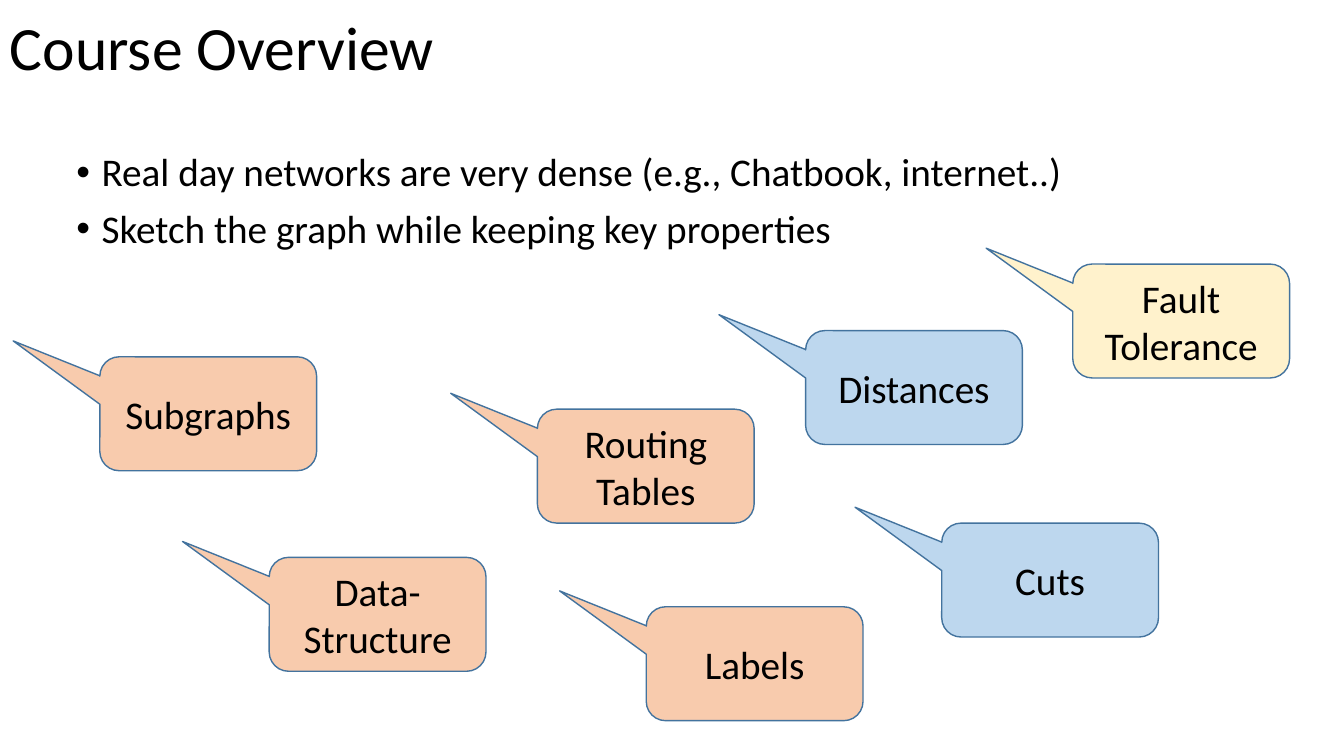
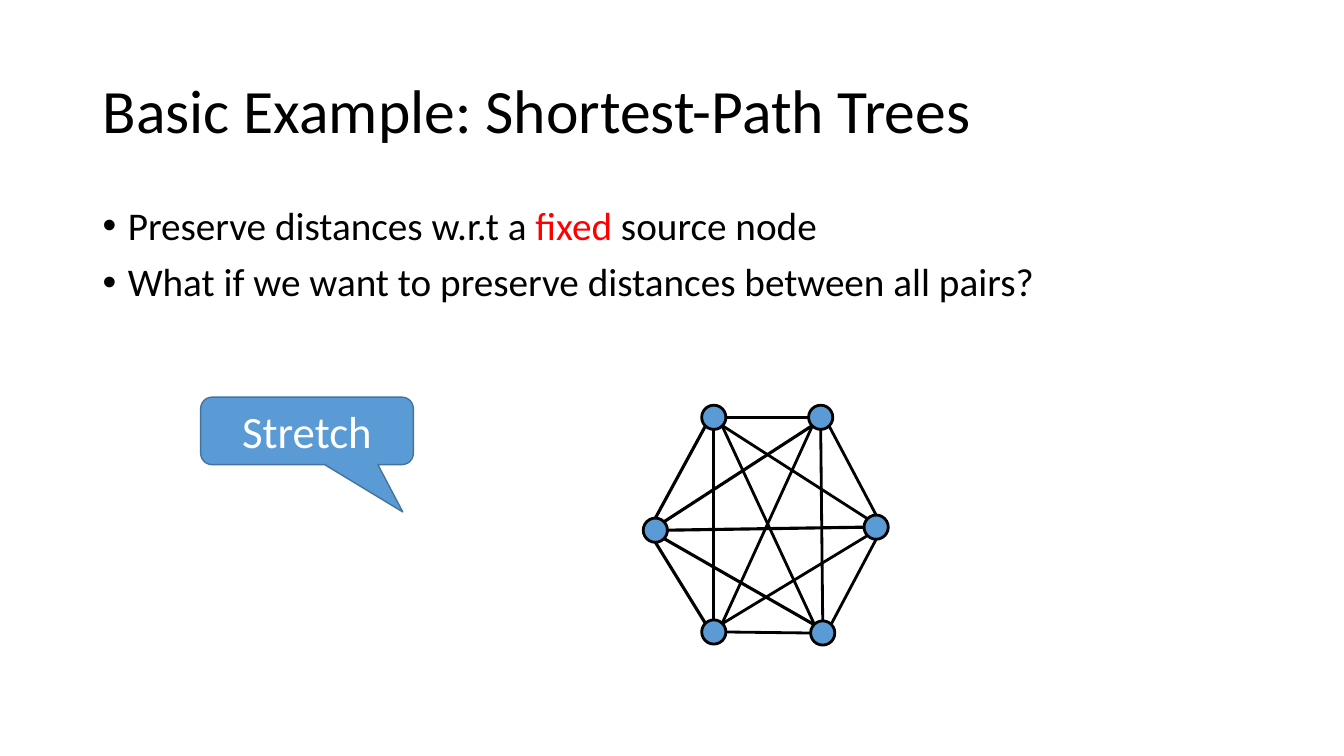
"""Build two lecture slides: a course overview and shortest-path trees."""
from math import cos, radians, sin

from lxml.etree import SubElement
from pptx import Presentation
from pptx.dml.color import RGBColor
from pptx.enum.shapes import MSO_CONNECTOR as CONN, MSO_SHAPE as SHAPE
from pptx.enum.text import MSO_ANCHOR as ANCHOR, PP_ALIGN as ALIGN
from pptx.oxml.ns import qn
from pptx.util import Pt

PX = 9144
BLACK = RGBColor(0x00, 0x00, 0x00)
WHITE = RGBColor(0xFF, 0xFF, 0xFF)
RED = RGBColor(0xFF, 0x00, 0x00)
BLUE = RGBColor(0x5B, 0x9B, 0xD5)
OUTLINE = RGBColor(0x43, 0x73, 0x9E)
ORANGE = RGBColor(0xF8, 0xCB, 0xAD)
PALE_BLUE = RGBColor(0xBD, 0xD7, 0xEE)
YELLOW = RGBColor(0xFF, 0xF2, 0xCC)

TITLE = {"size": 44, "para": {"line_spacing": 0.9}}
BODY = {"size": 28, "para": {"line_spacing": 0.9, "space_before": Pt(10)}}
LABEL = {"size": 28, "para": {"alignment": ALIGN.CENTER}}
STRETCH = {"size": 32, "para": {"alignment": ALIGN.CENTER}}


def write(sp, paragraphs, style, anchor=ANCHOR.MIDDLE, bullet=False):
    """Write paragraphs, each a list of (text, colour) runs."""
    tf = sp.text_frame
    tf.word_wrap = True
    tf.vertical_anchor = anchor
    for i, runs in enumerate(paragraphs):
        p = tf.add_paragraph() if i else tf.paragraphs[0]
        for name, value in style["para"].items():
            setattr(p, name, value)
        if bullet:
            pPr = p._p.get_or_add_pPr()
            pPr.set("marL", str(25 * PX))
            pPr.set("indent", str(-25 * PX))
            SubElement(pPr, qn("a:buFont")).set("typeface", "Arial")
            SubElement(pPr, qn("a:buChar")).set("char", "•")
        for text, color in runs:
            r = p.add_run()
            r.text = text
            r.font.color.rgb = color
            for name, value in {"name": "Calibri", "size": Pt(style["size"])}.items():
                setattr(r.font, name, value)


def add_shape(s, kind, box, fill, line, width, adjust=()):
    """Add a filled, outlined shape without a shadow."""
    sp = s.shapes.add_shape(kind, *(v * PX for v in box))
    sp.shadow.inherit = False
    sp.fill.solid()
    sp.fill.fore_color.rgb = fill
    sp.line.color.rgb = line
    sp.line.width = Pt(width)
    for i, value in enumerate(adjust):
        sp.adjustments[i] = value
    return sp


prs = Presentation()
prs.slide_width, prs.slide_height = 1333 * PX, 750 * PX

pages = [
    ("Course Overview", (0, -22), (66, 147), [
        [("Real day networks are very dense (e.g., Chatbook, internet..)", BLACK)],
        [("Sketch the graph while keeping key properties", BLACK)],
    ]),
    ("Basic Example: Shortest-Path Trees", (92, 40), (92, 200), [
        [("Preserve distances w.r.t a ", BLACK), ("fixed", RED), (" source node", BLACK)],
        [("What if we want to preserve distances between all pairs?", BLACK)],
    ]),
]
slides = []
for title, title_at, body_at, bullets in pages:
    s = prs.slides.add_slide(prs.slide_layouts[6])
    sp = s.shapes.add_textbox(*(v * PX for v in (*title_at, 1150, 145)))
    write(sp, [[(title, BLACK)]], TITLE)
    sp = s.shapes.add_textbox(*(v * PX for v in (*body_at, 1150, 476)))
    write(sp, bullets, BODY, ANCHOR.TOP, bullet=True)
    slides.append(s)
overview, trees = slides

topics = [
    ("Subgraphs", 99, 354, ORANGE),
    ("Data-Structure", 267, 553, ORANGE),
    ("Routing Tables", 533, 406, ORANGE),
    ("Labels", 641, 602, ORANGE),
    ("Distances", 799, 328, PALE_BLUE),
    ("Cuts", 934, 519, PALE_BLUE),
    ("Fault Tolerance", 1064, 262, YELLOW),
]
for topic, x, y, fill in topics:
    sp = add_shape(overview, SHAPE.ROUNDED_RECTANGULAR_CALLOUT, (x, y, 215, 113),
                   fill, OUTLINE, 1, (-0.9, -0.64, 0.17))
    write(sp, [[(topic, BLACK)]], LABEL)

RADIUS = 12
nodes = {
    "top left": (708, 414), "top right": (814, 414), "right": (869, 523),
    "bottom right": (816, 628), "bottom left": (708, 627), "left": (650, 526),
}
for x, y in nodes.values():
    add_shape(trees, SHAPE.OVAL, (x - RADIUS, y - RADIUS, 2 * RADIUS, 2 * RADIUS),
              BLUE, BLACK, 2)

ANGLES = {"E": 0, "SE": 45, "S": 90, "SW": 135, "W": 180, "NW": 225, "N": 270, "NE": 315}
edges = {
    2.25: [
        ("top left", "SW", "left", "N"),
        ("left", "S", "bottom left", "NW"),
        ("left", "E", "right", "W"),
        ("left", "NE", "top right", "SW"),
        ("left", "SE", "bottom right", "NW"),
        ("top left", "S", "bottom left", "N"),
    ],
    2: [
        ("top left", "E", "top right", "W"),
        ("top right", "SE", "right", "N"),
        ("right", "S", "bottom right", "NE"),
        ("bottom left", "E", "bottom right", "W"),
        ("top left", "SE", "bottom right", "NW"),
        ("top right", "SW", "bottom left", "NE"),
        ("top left", "SE", "right", "NW"),
        ("top right", "S", "bottom right", "N"),
        ("right", "SW", "bottom left", "NE"),
    ],
}
for width, group in edges.items():
    for start, start_side, end, end_side in group:
        ends = []
        for node, side in ((start, start_side), (end, end_side)):
            x, y = nodes[node]
            angle = radians(ANGLES[side])
            ends += [round(x + RADIUS * cos(angle)) * PX, round(y + RADIUS * sin(angle)) * PX]
        edge = trees.shapes.add_connector(CONN.STRAIGHT, *ends)
        edge.line.color.rgb = BLACK
        edge.line.width = Pt(width)
        SubElement(edge._element.spPr, qn("a:effectLst"))

sp = add_shape(trees, SHAPE.ROUNDED_RECTANGULAR_CALLOUT, (199, 394, 211, 67),
               BLUE, OUTLINE, 1, (0.45, 1.2, 0.17))
write(sp, [[("Stretch", WHITE)]], STRETCH)

prs.save("out.pptx")
